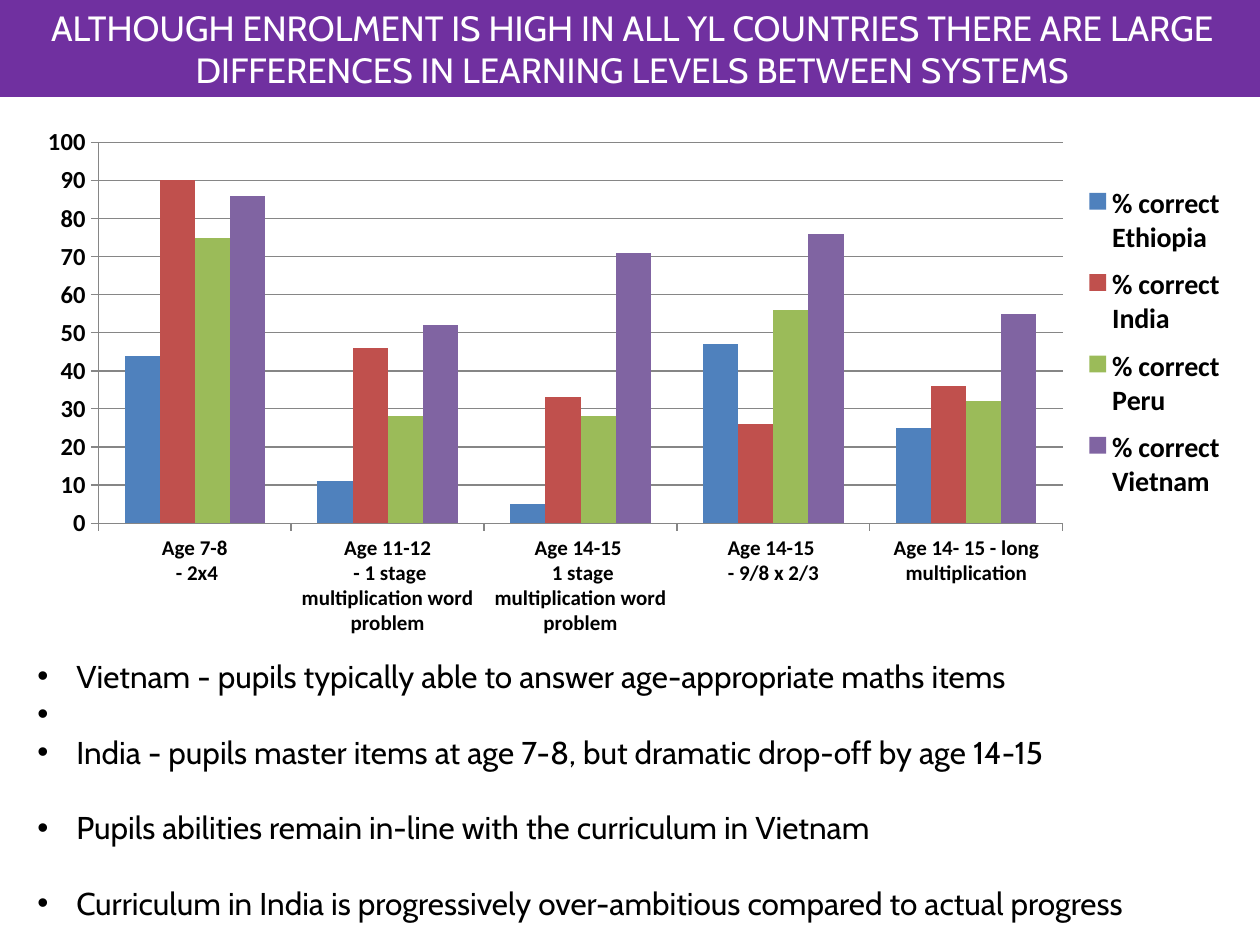
from dataclasses import dataclass

from lxml import etree
from pptx import Presentation
from pptx.chart.data import CategoryChartData
from pptx.dml.color import RGBColor
from pptx.enum.chart import XL_CHART_TYPE, XL_LEGEND_POSITION, XL_TICK_MARK
from pptx.enum.shapes import MSO_SHAPE
from pptx.enum.text import MSO_ANCHOR, MSO_AUTO_SIZE, PP_ALIGN
from pptx.oxml.ns import qn
from pptx.util import Emu, Pt

COLUMNS = XL_CHART_TYPE.COLUMN_CLUSTERED
RIGHT = XL_LEGEND_POSITION.RIGHT
TICK_OUT = XL_TICK_MARK.OUTSIDE
RECT = MSO_SHAPE.RECTANGLE
MIDDLE = MSO_ANCHOR.MIDDLE
GROW = MSO_AUTO_SIZE.SHAPE_TO_FIT_TEXT
CENTER, JUSTIFY = PP_ALIGN.CENTER, PP_ALIGN.JUSTIFY


@dataclass(frozen=True)
class Theme:
    font: str = "Cabin"
    chart_font: str = "Calibri"
    banner: str = "7030A0"
    light: str = "FFFFFF"
    text: str = "000000"
    grid: str = "868686"
    series: tuple = ("4F81BD", "C0504D", "9BBB59", "8064A2")
    title_size: int = 20
    body_size: int = 18
    legend_size: int = 16
    value_size: int = 14
    category_size: int = 12


def px(n):
    return Emu(round(n * 914400 / 126))


def rgb(color):
    return RGBColor.from_string(color)


class Builder:
    def __init__(self, prs, theme):
        self.theme = theme
        self.s = prs.slides.add_slide(prs.slide_layouts[6])

    def style(self, font, size, color, name, bold=False):
        font.size, font.name, font.bold = Pt(size), name, bold
        font.color.rgb = rgb(color)

    def run(self, p, text, size, color):
        r = p.add_run()
        r.text = text
        self.style(r.font, size, color, self.theme.font)

    def banner(self, text, x, y, w, h):
        t = self.theme
        sp = self.s.shapes.add_shape(RECT, px(x), px(y), px(w), px(h))
        sp.shadow.inherit = False
        sp.fill.solid()
        sp.fill.fore_color.rgb = rgb(t.banner)
        sp.line.fill.background()
        tf = sp.text_frame
        tf.word_wrap, tf.auto_size, tf.vertical_anchor = True, GROW, MIDDLE
        p = tf.paragraphs[0]
        p.alignment, p.space_before = CENTER, Pt(3)
        self.run(p, text, t.title_size, t.light)

    def bullets(self, items, x, y, w, h, indent):
        """Each item is its text and the space before it in points."""
        t = self.theme
        tf = self.s.shapes.add_textbox(px(x), px(y), px(w), px(h)).text_frame
        tf.word_wrap, tf.auto_size = True, GROW
        for i, (text, gap) in enumerate(items):
            p = tf.add_paragraph() if i else tf.paragraphs[0]
            p.alignment, p.space_before = JUSTIFY, Pt(gap)
            pPr = p._p.get_or_add_pPr()
            pPr.set("marL", str(px(indent)))
            pPr.set("indent", str(-px(indent)))
            etree.SubElement(pPr, qn("a:buFont")).set("typeface", "Arial")
            etree.SubElement(pPr, qn("a:buChar")).set("char", "•")
            self.run(p, text, t.body_size, t.text)

    def layout(self, x, y, w, h, inner=False):
        """Manual chart layout, in fractions of the chart frame."""
        layout = etree.Element(qn("c:layout"))
        manual = etree.SubElement(layout, qn("c:manualLayout"))
        values = {"layoutTarget": "inner"} if inner else {}
        values.update(xMode="edge", yMode="edge", x=x, y=y, w=w, h=h)
        for tag, value in values.items():
            etree.SubElement(manual, qn(f"c:{tag}")).set("val", str(value))
        return layout

    def column_chart(self, categories, series, x, y, w, h):
        t = self.theme
        data = CategoryChartData()
        data.categories = categories
        for name, values in series.items():
            data.add_series(name, values)
        chart = self.s.shapes.add_chart(
            COLUMNS, px(x), px(y), px(w), px(h), data).chart
        chart.has_title = False
        self.style(chart.font, 10, t.text, t.chart_font)

        # Columns
        plot = chart.plots[0]
        plot.gap_width, plot.overlap, plot.vary_by_categories = 150, 0, False
        for ser, color in zip(plot.series, t.series):
            ser.format.fill.solid()
            ser.format.fill.fore_color.rgb = rgb(color)

        # Axes
        cat, val = chart.category_axis, chart.value_axis
        val.minimum_scale, val.maximum_scale, val.major_unit = 0, 100, 10
        val.has_major_gridlines = True
        for axis, size in ((cat, t.category_size), (val, t.value_size)):
            axis.major_tick_mark = TICK_OUT
            self.style(axis.tick_labels.font, size, t.text, t.chart_font, True)
        for part in (cat, val, val.major_gridlines):
            part.format.line.color.rgb = rgb(t.grid)
            part.format.line.width = Pt(0.75)

        # Legend and plot area positions
        chart.has_legend = True
        legend = chart.legend
        legend.position, legend.include_in_layout = RIGHT, False
        self.style(legend.font, t.legend_size, t.text, t.chart_font, True)
        legend_pos = legend._element.find(qn("c:legendPos"))
        for old in legend._element.findall(qn("c:layout")):
            legend._element.remove(old)
        legend_pos.addnext(self.layout(0.86, 0.11, 0.13, 0.64))
        area = chart._chartSpace.chart.plotArea
        for old in area.findall(qn("c:layout")):
            area.remove(old)
        area.insert(0, self.layout(0.06, 0.05, 0.79, 0.72, inner=True))


def main():
    prs = Presentation()
    prs.slide_width, prs.slide_height = px(1260), px(945)
    b = Builder(prs, Theme())

    # Title banner
    b.banner("ALTHOUGH ENROLMENT IS HIGH IN ALL YL COUNTRIES THERE ARE LARGE "
             "DIFFERENCES IN LEARNING LEVELS BETWEEN SYSTEMS", 0, 0, 1265, 97)

    # Test results by age and country
    categories = [
        "Age 7-8\n - 2x4",
        "Age 11-12\n - 1 stage multiplication word problem",
        "Age 14-15 \n 1 stage multiplication word problem",
        "Age 14-15 \n- 9/8 x 2/3",
        "Age 14- 15 - long multiplication",
    ]
    series = {
        "% correct Ethiopia": (44, 11, 5, 47, 25),
        "% correct India": (90, 46, 33, 26, 36),
        "% correct Peru": (75, 28, 28, 56, 32),
        "% correct Vietnam": (86, 52, 71, 76, 55),
    }
    b.column_chart(categories, series, 25, 116, 1221, 529)

    # Findings; the second bullet stands alone
    line = 21.6
    b.bullets([
        ("Vietnam - pupils typically able to answer age-appropriate maths items", 0),
        (" ", 0),
        ("India - pupils master items at age 7-8, but dramatic drop-off by age 14-15", 0),
        ("Pupils abilities remain in-line with the curriculum in Vietnam ", line),
        ("Curriculum in India is progressively over-ambitious compared to actual progress", line),
    ], 25, 651, 1211, 280, 39)

    prs.save("out.pptx")


if __name__ == "__main__":
    main()
